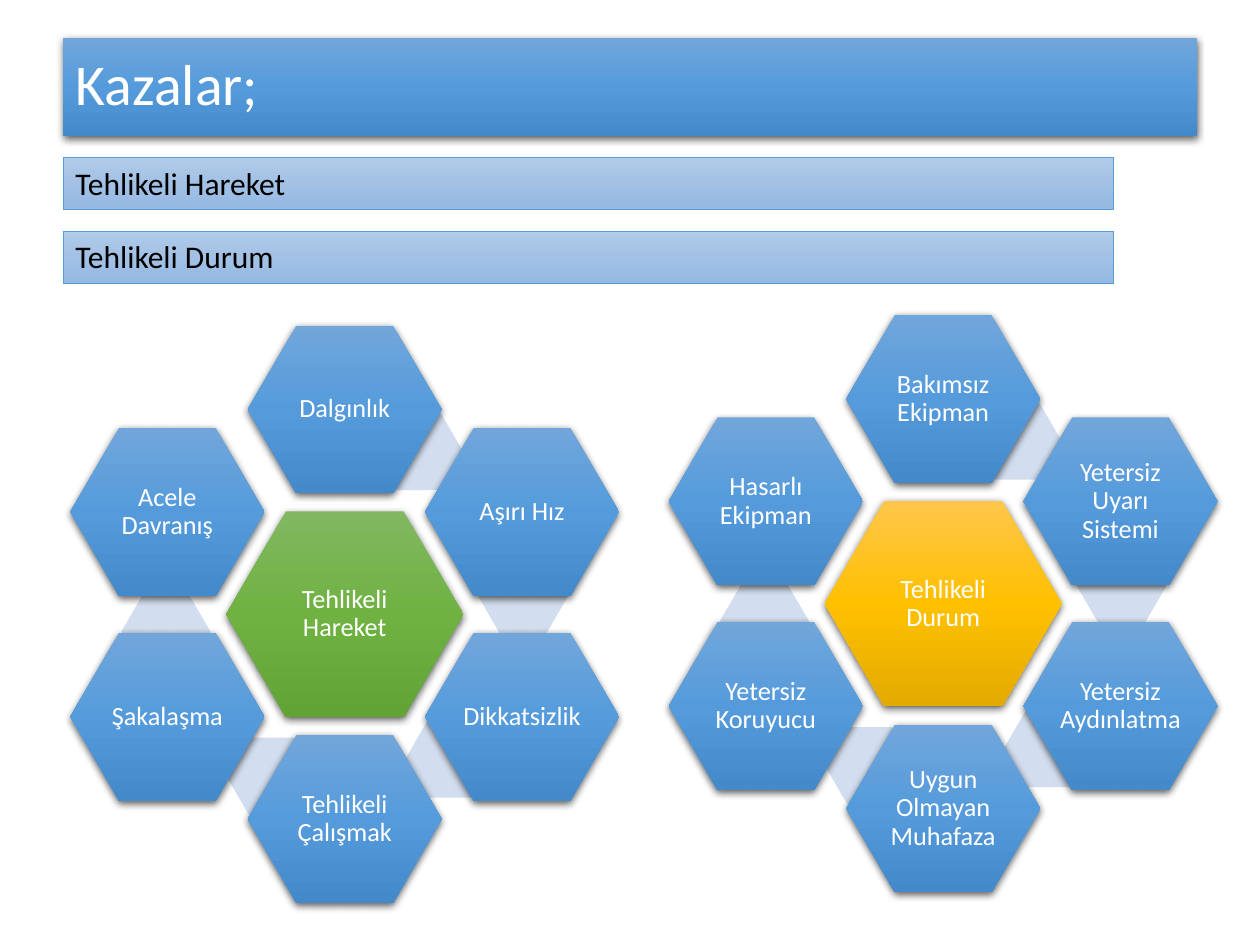
from copy import deepcopy
from dataclasses import dataclass
from itertools import zip_longest
from math import cos, radians, sin

from lxml.etree import SubElement
from pptx import Presentation
from pptx.dml.color import RGBColor
from pptx.enum.shapes import MSO_SHAPE
from pptx.enum.text import MSO_ANCHOR, MSO_AUTO_SIZE, PP_ALIGN
from pptx.oxml.ns import qn
from pptx.util import Pt


@dataclass(frozen=True)
class Theme:
    font: str = "Calibri"
    title_size: int = 33
    bar_size: int = 18
    node_size: int = 15
    light: str = "FFFFFF"
    dark: str = "000000"
    accent: str = "D2DEEF"
    bar_line: str = "5B9BD5"
    blue: tuple = ("71A6DB", "559BDB", "448ACA")
    pale_blue: tuple = ("B1CBE9", "A3C1E5", "93B9E4")
    green: tuple = ("81B861", "6FB242", "62A336")
    amber: tuple = ("FFC64B", "FFC000", "E3AB00")


THEME = Theme()
ORBIT = 117
HUB_SIZE = (135.4, 117.4)
NODE_SIZE = (110.9, 96)
ACCENT_SIZE = (51.1, 43.9)
ACCENT_OFFSETS = [(42.1, -92.9), (101.9, -10.1), (60.1, 82.8), (-42.1, 92.5), (-102.2, 10.1)]


def fill_gradient(shape, colors):
    shape.fill.gradient()
    shape.fill.gradient_angle = 270
    stop_list = shape._element.spPr.find(qn("a:gradFill")).find(qn("a:gsLst"))
    stop_list.append(deepcopy(stop_list[0]))
    for stop, position, color in zip(shape.fill.gradient_stops, (0, 0.5, 1), colors):
        stop.position = position
        stop.color.rgb = RGBColor.from_string(color)


def add_shadow(shape):
    shape.shadow.inherit = False
    effects = shape._element.spPr.find(qn("a:effectLst"))
    shadow = SubElement(effects, qn("a:outerShdw"), blurRad=str(Pt(4.5)), dist=str(Pt(1.5)),
                        dir="5400000", algn="ctr", rotWithShape="0")
    color = SubElement(shadow, qn("a:srgbClr"), val="000000")
    SubElement(color, qn("a:alpha"), val="63000")


def write_text(shape, text, size, color, alignment, spacing=1.0):
    frame = shape.text_frame
    frame.text = text
    frame.word_wrap = True
    paragraph = frame.paragraphs[0]
    paragraph.alignment = alignment
    paragraph.line_spacing = spacing
    paragraph.font.name = THEME.font
    paragraph.font.size = Pt(size)
    paragraph.font.color.rgb = RGBColor.from_string(color)
    return frame


def format_title(title, text):
    title.left, title.top, title.width, title.height = Pt(36), Pt(21.6), Pt(648), Pt(56.2)
    fill_gradient(title, THEME.blue)
    add_shadow(title)
    frame = write_text(title, text, THEME.title_size, THEME.light, PP_ALIGN.LEFT, 0.9)
    frame.auto_size = MSO_AUTO_SIZE.NONE
    frame.vertical_anchor = MSO_ANCHOR.MIDDLE


def add_bar(slide, text, top):
    bar = slide.shapes.add_shape(MSO_SHAPE.RECTANGLE, Pt(36), Pt(top), Pt(600), Pt(30))
    fill_gradient(bar, THEME.pale_blue)
    bar.line.color.rgb = RGBColor.from_string(THEME.bar_line)
    bar.line.width = Pt(0.5)
    bar.shadow.inherit = False
    frame = write_text(bar, text, THEME.bar_size, THEME.dark, PP_ALIGN.LEFT)
    frame.auto_size = MSO_AUTO_SIZE.SHAPE_TO_FIT_TEXT
    frame.vertical_anchor = MSO_ANCHOR.TOP


def add_hexagon(group, center_x, center_y, size, ratio):
    width, height = size
    hexagon = group.shapes.add_shape(
        MSO_SHAPE.HEXAGON, Pt(center_x - width / 2), Pt(center_y - height / 2), Pt(width), Pt(height))
    hexagon.adjustments[0] = ratio
    hexagon.line.fill.background()
    return hexagon


def add_accent(group, center_x, center_y):
    accent = add_hexagon(group, center_x, center_y, ACCENT_SIZE, 0.29)
    accent.fill.solid()
    accent.fill.fore_color.rgb = RGBColor.from_string(THEME.accent)
    accent.shadow.inherit = False


def add_node(group, text, center_x, center_y, size, colors):
    node = add_hexagon(group, center_x, center_y, size, 0.29)
    fill_gradient(node, colors)
    add_shadow(node)
    frame = write_text(node, text, THEME.node_size, THEME.light, PP_ALIGN.CENTER, 0.9)
    frame.vertical_anchor = MSO_ANCHOR.MIDDLE
    frame.margin_left = frame.margin_right = frame.margin_top = frame.margin_bottom = Pt(1.5)


def add_cluster(slide, hub, causes, center_x, center_y, hub_colors):
    group = slide.shapes.add_group_shape()
    add_node(group, hub, center_x, center_y, HUB_SIZE, hub_colors)
    for index, (cause, offset) in enumerate(zip_longest(causes, ACCENT_OFFSETS)):
        if offset:
            add_accent(group, center_x + offset[0], center_y + offset[1])
        angle = radians(60 * index)
        add_node(group, cause, center_x + ORBIT * sin(angle), center_y - ORBIT * cos(angle),
                 NODE_SIZE, THEME.blue)


def main():
    presentation = Presentation()
    presentation.slide_width, presentation.slide_height = Pt(720), Pt(540)
    slide = presentation.slides.add_slide(presentation.slide_layouts[5])
    format_title(slide.shapes.title, "Kazalar;")
    add_bar(slide, "Tehlikeli Hareket", 90)
    add_bar(slide, "Tehlikeli Durum", 132)
    add_cluster(slide, "Tehlikeli Hareket",
                ["Dalgınlık", "Aşırı Hız", "Dikkatsizlik", "Tehlikeli Çalışmak",
                 "Şakalaşma", "Acele Davranış"],
                197, 351, THEME.green)
    add_cluster(slide, "Tehlikeli Durum",
                ["Bakımsız Ekipman", "Yetersiz Uyarı Sistemi", "Yetersiz Aydınlatma",
                 "Uygun Olmayan Muhafaza", "Yetersiz Koruyucu", "Hasarlı Ekipman"],
                539, 345, THEME.amber)
    presentation.save("out.pptx")


if __name__ == "__main__":
    main()
